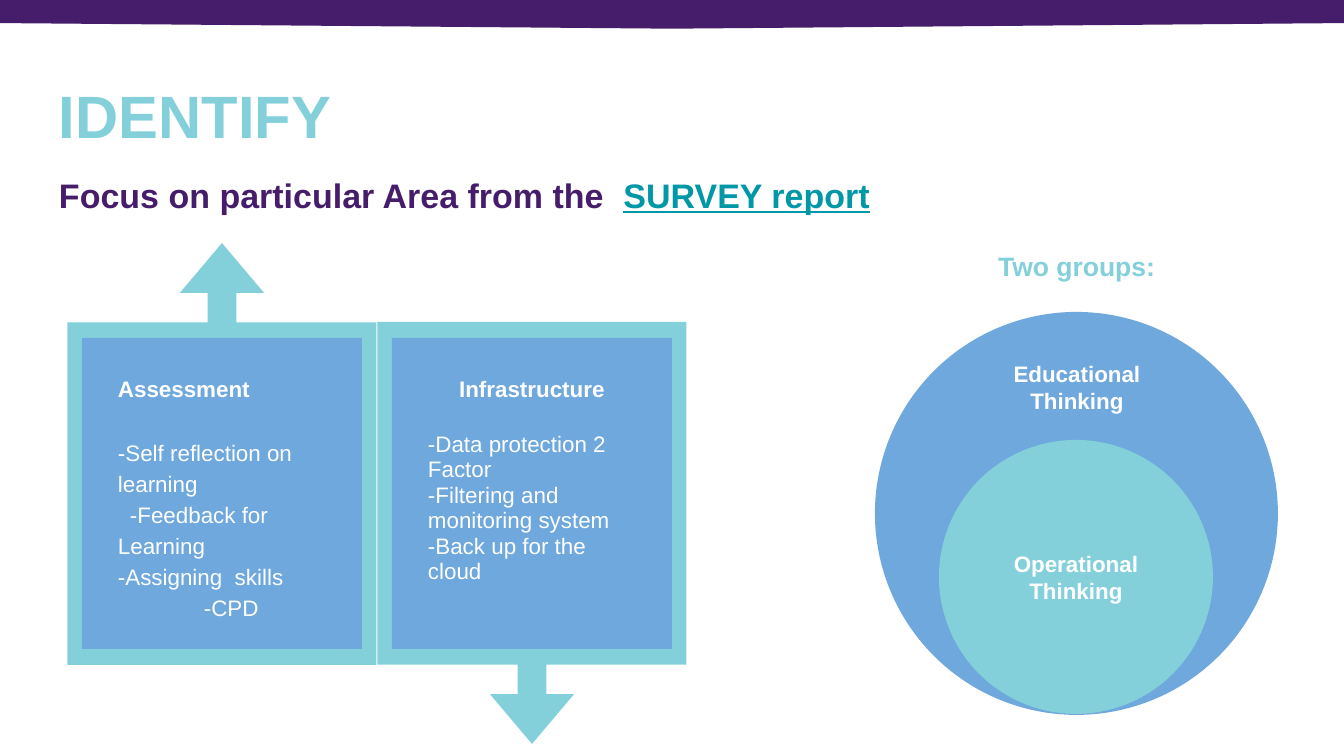
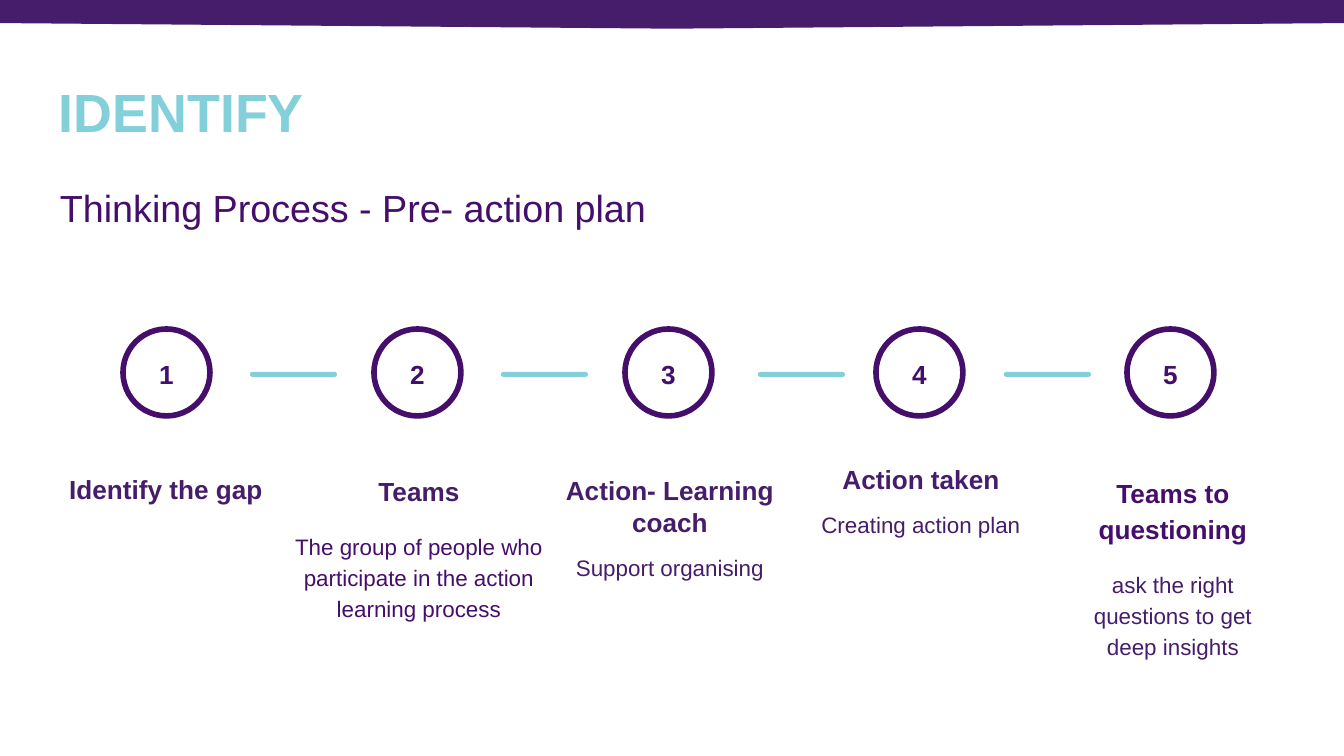
"""Builds the two IDENTIFY slides and saves them as out.pptx."""
from dataclasses import dataclass

from pptx import Presentation
from pptx.dml.color import RGBColor
from pptx.enum.shapes import MSO_SHAPE as SH
from pptx.enum.text import MSO_ANCHOR as ANCHOR, MSO_AUTO_SIZE as AUTO, PP_ALIGN as AL
from pptx.util import Emu, Pt


@dataclass(frozen=True)
class Theme:
    font: str = "Arial"
    aqua: str = "83D0DB"
    blue: str = "6FA8DC"
    ink: str = "451D6A"
    violet: str = "450E6B"
    link: str = "0097A7"
    white: str = "FFFFFF"
    title: float = 32
    title_small: float = 28.8
    subtitle: float = 20.2
    focus: float = 18.2
    groups: float = 14.2
    heading: float = 14
    body: float = 12


T = Theme()
PX = 914400 / 134.4
INSET = 13
W, H = 1344, 756

TITLE = "IDENTIFY"
FOCUS = [("Focus on particular Area from the  ", {}),
         ("SURVEY report", {"color": T.link, "underline": True})]
GROUPS_TITLE = "Two groups:"
PROCESS = "Thinking Process - Pre- action plan"

AREAS = [
    {"heading": "Assessment", "align": AL.LEFT, "gap": 18, "spacing": 1.15,
     "center": (222, 454), "turn": 270,
     "points": [("-Self reflection on learning", 0), ("-Feedback for Learning", 12),
                ("-Assigning  skills", 0), ("-CPD", 86)]},
    {"heading": "Infrastructure", "align": AL.CENTER, "gap": 16, "spacing": 0.95,
     "center": (532, 533), "turn": 90,
     "points": [("-Data protection 2 Factor", 0), ("-Filtering and monitoring system", 0),
                ("-Back up for the cloud", 0)]},
]
CALLOUT = (422, 309)
CALLOUT_ADJ = (0.093, 0.136, 0.161, 0.812)

GROUPS = [
    ("Educational Thinking", T.blue, (875, 312, 403, 403), (978, 341, 198, 93)),
    ("Operational Thinking", T.aqua, (939, 440, 274, 274), (984, 544, 184, 67)),
]

SPACED = {"spacing": 1.15, "gap": 12, "after": 12}
TIGHT = {"spacing": 1, "gap": 9, "after": 16}
STEPS = [
    ("Identify the gap", "", (54, 419, 224, 136), ANCHOR.MIDDLE, SPACED, (T.ink, T.ink)),
    ("Teams", "The group of people who participate in the action learning process",
     (263, 460, 312, 172), ANCHOR.MIDDLE, SPACED, (T.ink, T.violet)),
    ("Action- Learning coach", "Support organising",
     (552, 460, 236, 136), ANCHOR.MIDDLE, TIGHT, (T.ink, T.ink)),
    ("Action taken", "Creating action plan",
     (790, 450, 262, 156), ANCHOR.TOP, TIGHT, (T.ink, T.ink)),
    ("Teams to questioning", "ask the right questions to get deep insights",
     (1055, 460, 236, 212), ANCHOR.MIDDLE, SPACED, (T.violet, T.ink)),
]
RING_X, RING_Y, RING, PITCH = 123, 329, 87, 251
BARS_X = (250, 501, 758, 1004)


def px(n):
    return Emu(round(n * PX))


def rgb(color):
    return RGBColor.from_string(color)


def write(tf, text, size=T.body, color=T.white, bold=False, underline=None, align=AL.LEFT,
          spacing=1, before=0, after=0, indent=0):
    """Adds one paragraph; text is a string or a list of (string, overrides)."""
    p = tf.paragraphs[0] if not tf.paragraphs[0].runs else tf.add_paragraph()
    p.alignment, p.line_spacing = align, spacing
    p.space_before, p.space_after = Pt(before), Pt(after)
    if indent:
        p._p.get_or_add_pPr().set("indent", str(px(indent)))
    for words, own in [(text, {})] if isinstance(text, str) else text:
        r = p.add_run()
        r.text = words
        f = r.font
        f.name, f.size, f.bold = T.font, Pt(size), bold
        f.underline = own.get("underline", underline)
        f.color.rgb = rgb(own.get("color", color))


def set_frame(sp, anchor=ANCHOR.TOP):
    tf = sp.text_frame
    tf.word_wrap, tf.auto_size, tf.vertical_anchor = True, AUTO.NONE, anchor
    tf.margin_left = tf.margin_right = tf.margin_top = tf.margin_bottom = px(INSET)
    return tf


def text_box(s, box, anchor=ANCHOR.TOP):
    return set_frame(s.shapes.add_textbox(*map(px, box)), anchor)


def shape(s, kind, box, fill=None, line=None, weight=0.75, adj=()):
    sp = s.shapes.add_shape(kind, *map(px, box))
    sp.shadow.inherit = False
    if fill:
        sp.fill.solid()
        sp.fill.fore_color.rgb = rgb(fill)
    else:
        sp.fill.background()
    if line:
        sp.line.color.rgb = rgb(line)
        sp.line.width = Pt(weight)
    else:
        sp.line.fill.background()
    for i, value in enumerate(adj):
        sp.adjustments[i] = value
    return sp


def new_slide(prs, title_size):
    """Adds a slide with the shared title and top band."""
    s = prs.slides.add_slide(prs.slide_layouts[5])
    title = s.shapes.title
    title.left, title.top, title.width, title.height = map(px, (46, 66, 1252, 85))
    write(set_frame(title), TITLE, size=title_size, color=T.aqua, bold=True)
    shape(s, SH.FLOWCHART_OFFPAGE_CONNECTOR, (0, 0, W, 28), T.ink, T.ink)
    return s


def add_area(s, area):
    cx, cy = area["center"]
    w, h = CALLOUT
    callout = shape(s, SH.RIGHT_ARROW_CALLOUT, (cx - w / 2, cy - h / 2, w, h), T.aqua,
                    adj=CALLOUT_ADJ)
    callout.rotation = area["turn"]
    shape(s, SH.SNIP_1_RECTANGLE, (cx - 140, 338, 280, 311), T.blue, adj=(0,))
    tf = text_box(s, (cx - 117, 358, 234, 260))
    write(tf, area["heading"], bold=True, align=area["align"], spacing=1.15)
    for i, (point, indent) in enumerate(area["points"]):
        write(tf, point, spacing=area["spacing"], indent=indent,
              before=0 if i else area["gap"])


def areas_slide(prs):
    s = new_slide(prs, T.title)
    write(text_box(s, (46, 169, 1252, 74)), FOCUS, size=T.focus, color=T.ink, bold=True,
          spacing=0.8)
    for area in AREAS:
        add_area(s, area)
    for name, color, circle, label in GROUPS:
        shape(s, SH.OVAL, circle, color)
        sp = shape(s, SH.RECTANGLE, label, color)
        write(set_frame(sp, ANCHOR.MIDDLE), name, bold=True, align=AL.CENTER)
    write(text_box(s, (830, 243, 493, 74)), GROUPS_TITLE, size=T.groups, color=T.aqua,
          bold=True, align=AL.CENTER, spacing=0.8)


def process_slide(prs):
    s = new_slide(prs, T.title_small)
    write(text_box(s, (47, 172, 1048, 73)), PROCESS, size=T.subtitle, color=T.violet)
    for x in BARS_X:
        shape(s, SH.ROUNDED_RECTANGLE, (x, 372, 87, 5), T.aqua, adj=(0.5,))
    for i, (heading, body, box, anchor, gaps, colors) in enumerate(STEPS):
        x = RING_X + i * PITCH
        shape(s, SH.OVAL, (x, RING_Y, RING, RING), line=T.violet, weight=3)
        write(text_box(s, (x + RING / 2 - 25, 345, 50, 59)), str(i + 1), size=T.heading,
              color=T.violet, bold=True, align=AL.CENTER)
        tf = text_box(s, box, anchor)
        write(tf, heading, size=T.heading, color=colors[0], bold=True, align=AL.CENTER,
              spacing=gaps["spacing"], after=0 if body else gaps["after"])
        if body:
            write(tf, body, color=colors[1], align=AL.CENTER, spacing=gaps["spacing"],
                  before=gaps["gap"], after=gaps["after"])


def main():
    prs = Presentation()
    prs.slide_width, prs.slide_height = px(W), px(H)
    areas_slide(prs)
    process_slide(prs)
    prs.save("out.pptx")


if __name__ == "__main__":
    main()
